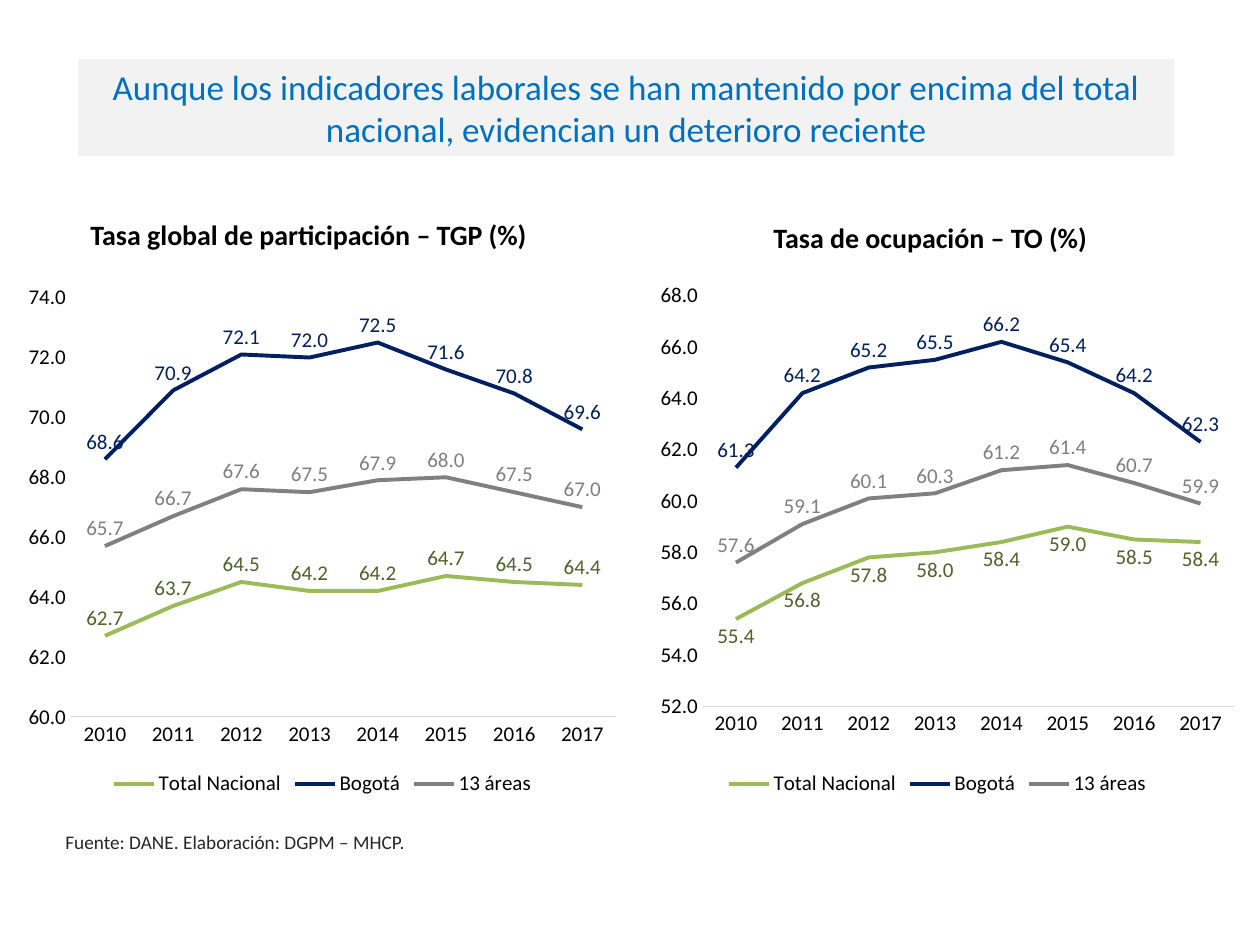
from lxml.etree import SubElement
from pptx import Presentation
from pptx.chart.data import CategoryChartData
from pptx.dml.color import RGBColor
from pptx.enum.chart import XL_CHART_TYPE as ChartType
from pptx.enum.chart import XL_LABEL_POSITION as LabelPosition
from pptx.enum.chart import XL_LEGEND_POSITION as LegendPosition
from pptx.enum.chart import XL_TICK_MARK as TickMark
from pptx.enum.text import MSO_ANCHOR, MSO_AUTO_SIZE, PP_ALIGN
from pptx.oxml.ns import qn
from pptx.util import Inches, Pt

FONT = "Calibri"
BLACK = RGBColor(0x00, 0x00, 0x00)
DARK_GRAY = RGBColor(0x26, 0x26, 0x26)
GRAY = RGBColor(0x80, 0x80, 0x80)
AXIS_GRAY = RGBColor(0xD9, 0xD9, 0xD9)
TITLE_FILL = RGBColor(0xF2, 0xF2, 0xF2)
TITLE_BLUE = RGBColor(0x00, 0x70, 0xC0)
NAVY = RGBColor(0x00, 0x20, 0x60)
GREEN = RGBColor(0x9B, 0xBB, 0x59)
DARK_GREEN = RGBColor(0x4F, 0x62, 0x28)

TITLE = ("Aunque los indicadores laborales se han mantenido por encima del total "
         "nacional, evidencian un deterioro reciente")
SOURCE = "Fuente: DANE. Elaboración: DGPM – MHCP."
YEARS = [str(year) for year in range(2010, 2018)]
# Series name, line colour, label colour
SERIES = [
    ("Total Nacional", GREEN, DARK_GREEN),
    ("Bogotá", NAVY, NAVY),
    ("13 áreas", GRAY, GRAY),
]
CHARTS = [
    {
        "heading": "Tasa global de participación – TGP (%)",
        "heading_box": (0.62, 1.68, 4.16, 0.37),
        "box": (0.13, 2.18, 4.86, 4.18),
        "scale": (60, 74),
        "national_labels": LabelPosition.ABOVE,
        "plot": None,
        "values": [
            (62.7, 63.7, 64.5, 64.2, 64.2, 64.7, 64.5, 64.4),
            (68.6, 70.9, 72.1, 72.0, 72.5, 71.6, 70.8, 69.6),
            (65.7, 66.7, 67.6, 67.5, 67.9, 68.0, 67.5, 67.0),
        ],
    },
    {
        "heading": "Tasa de ocupación – TO (%)",
        "heading_box": (6.04, 1.7, 3.06, 0.37),
        "box": (4.99, 2.18, 4.9, 4.18),
        "scale": (52, 68),
        "national_labels": LabelPosition.BELOW,
        "plot": {"x": 0.12, "y": 0.04, "w": 0.86, "h": 0.78},
        "values": [
            (55.4, 56.8, 57.8, 58.0, 58.4, 59.0, 58.5, 58.4),
            (61.3, 64.2, 65.2, 65.5, 66.2, 65.4, 64.2, 62.3),
            (57.6, 59.1, 60.1, 60.3, 61.2, 61.4, 60.7, 59.9),
        ],
    },
]


def set_font(font, size, color, bold=False):
    font.name, font.size, font.bold = FONT, Pt(size), bold
    font.color.rgb = color


def add_title(slide):
    title = slide.shapes.title
    title.left, title.top, title.width, title.height = map(Inches, (0.62, 0.47, 8.7, 0.77))
    title.fill.solid()
    title.fill.fore_color.rgb = TITLE_FILL
    frame = title.text_frame
    frame.text = TITLE
    frame.auto_size = MSO_AUTO_SIZE.NONE
    frame.vertical_anchor = MSO_ANCHOR.MIDDLE
    paragraph = frame.paragraphs[0]
    paragraph.alignment = PP_ALIGN.CENTER
    set_font(paragraph.font, 20, TITLE_BLUE)


def add_text(slide, text, box, size, color, bold=False, wrap=False):
    frame = slide.shapes.add_textbox(*map(Inches, box)).text_frame
    frame.word_wrap = wrap
    frame.text = text
    set_font(frame.paragraphs[0].font, size, color, bold)


def set_plot_layout(chart, plot):
    """Fix the inner plot area at fractions of the chart's size."""
    plot_area = chart._chartSpace.chart.plotArea
    layout = plot_area.find(qn("c:layout"))
    if layout is None:
        layout = SubElement(plot_area, qn("c:layout"))
        plot_area.insert(0, layout)
    manual = SubElement(layout, qn("c:manualLayout"))
    settings = {"layoutTarget": "inner", "xMode": "edge", "yMode": "edge", **plot}
    for name, value in settings.items():
        SubElement(manual, qn(f"c:{name}")).set("val", str(value))


def add_line_chart(slide, content):
    data = CategoryChartData(number_format="0.0")
    data.categories = YEARS
    for (name, _, _), values in zip(SERIES, content["values"]):
        data.add_series(name, values)
    chart = slide.shapes.add_chart(
        ChartType.LINE, *map(Inches, content["box"]), data).chart
    set_font(chart.font, 12, BLACK)
    chart.has_title = False
    chart.has_legend = True
    chart.legend.position = LegendPosition.BOTTOM
    chart.legend.include_in_layout = False
    set_font(chart.legend.font, 12, BLACK)

    for axis in (chart.category_axis, chart.value_axis):
        axis.major_tick_mark = axis.minor_tick_mark = TickMark.NONE
        axis.has_major_gridlines = False
        set_font(axis.tick_labels.font, 12, BLACK)
    chart.category_axis.format.line.color.rgb = AXIS_GRAY
    chart.category_axis.format.line.width = Pt(0.75)
    value_axis = chart.value_axis
    value_axis.format.line.fill.background()
    value_axis.minimum_scale, value_axis.maximum_scale = content["scale"]
    value_axis.major_unit = 2
    value_axis.tick_labels.number_format = "0.0"
    value_axis.tick_labels.number_format_is_linked = False

    chart.plots[0].vary_by_categories = False
    positions = (content["national_labels"], LabelPosition.ABOVE, LabelPosition.ABOVE)
    for series, (_, color, label_color), position in zip(
            chart.plots[0].series, SERIES, positions):
        series.smooth = False
        series.format.line.color.rgb = color
        series.format.line.width = Pt(2.25)
        labels = series.data_labels
        labels.show_value = True
        labels.number_format = "0.0"
        labels.number_format_is_linked = False
        labels.position = position
        set_font(labels.font, 12, label_color)
    if content["plot"]:
        set_plot_layout(chart, content["plot"])


def main():
    presentation = Presentation()
    presentation.slide_width, presentation.slide_height = Inches(10), Inches(7.5)
    slide = presentation.slides.add_slide(presentation.slide_layouts[5])
    add_title(slide)
    add_text(slide, SOURCE, (0.42, 6.54, 5.18, 0.29), 11, DARK_GRAY, wrap=True)
    for content in CHARTS:
        add_text(slide, content["heading"], content["heading_box"], 16, BLACK, bold=True)
        add_line_chart(slide, content)
    presentation.save("out.pptx")


if __name__ == "__main__":
    main()
